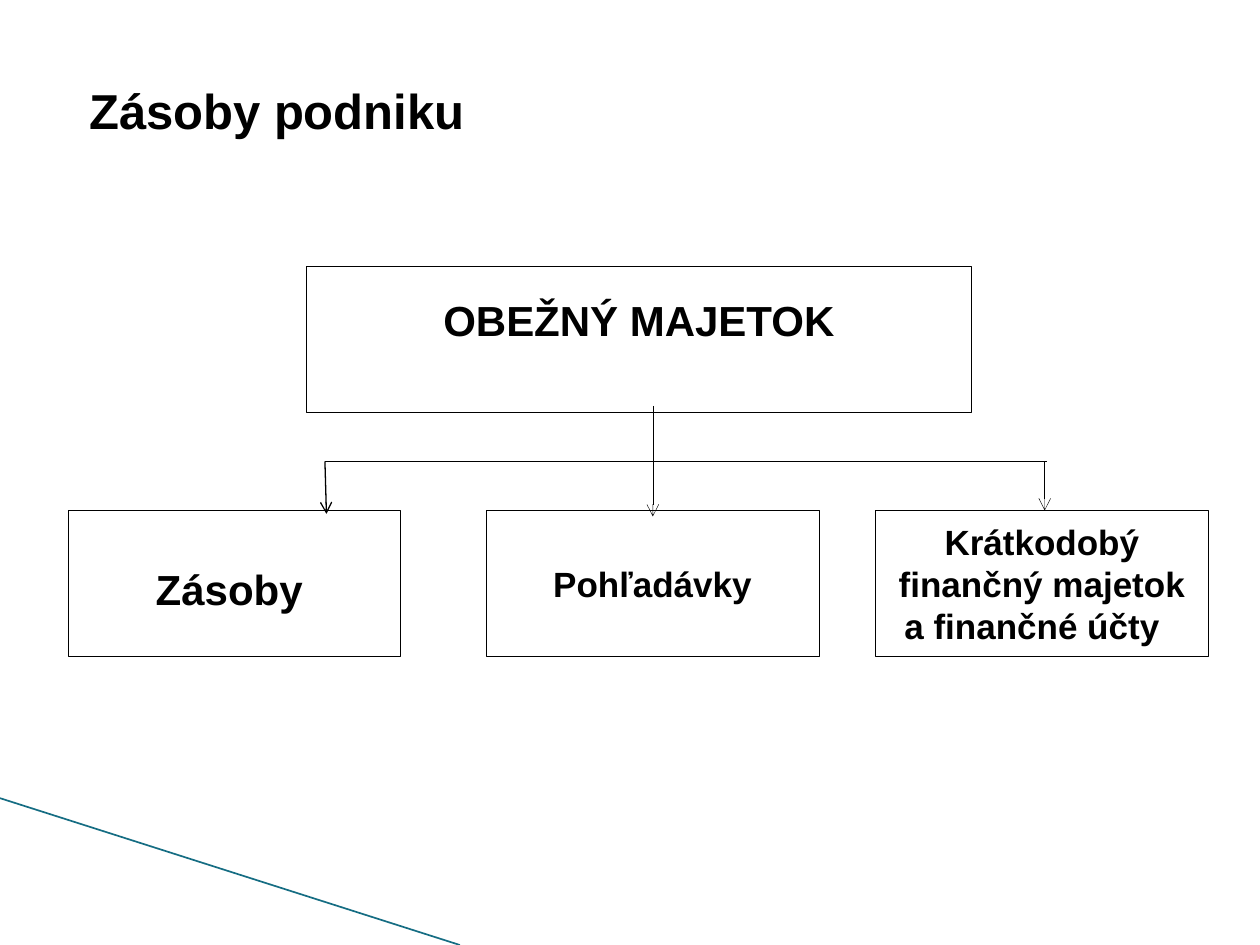
from lxml.etree import SubElement
from pptx import Presentation
from pptx.dml.color import RGBColor
from pptx.enum.shapes import MSO_CONNECTOR, MSO_SHAPE
from pptx.enum.text import MSO_ANCHOR, PP_ALIGN
from pptx.oxml.ns import qn
from pptx.util import Cm, Pt

BLACK = RGBColor(0, 0, 0)
TEAL = RGBColor(0x15, 0x6D, 0x83)
BOX_W, BOX_H = 6.71, 2.95
ROW_Y = 10.29
BAR_Y = 9.3


def style(frame, size, align):
    for para in frame.paragraphs:
        para.alignment = align
        for run in para.runs:
            font = run.font
            font.name, font.size, font.bold = "Arial", Pt(size), True
            font.color.rgb = BLACK


def add_title(slide, text):
    box = slide.shapes.add_textbox(Cm(1.55), Cm(1.5), Cm(22.1), Cm(1.6))
    frame = box.text_frame
    frame.word_wrap = True
    frame.text = text
    style(frame, 28, PP_ALIGN.LEFT)


def add_box(slide, x, y, width, text, size, top, left=0, align=PP_ALIGN.CENTER):
    box = slide.shapes.add_shape(
        MSO_SHAPE.RECTANGLE, Cm(x), Cm(y), Cm(width), Cm(BOX_H))
    box.shadow.inherit = False
    box.fill.background()
    box.line.color.rgb = BLACK
    box.line.width = Pt(0.25)
    frame = box.text_frame
    frame.word_wrap = True
    frame.vertical_anchor = MSO_ANCHOR.TOP
    frame.margin_left, frame.margin_top = Cm(left), Cm(top)
    frame.margin_right = frame.margin_bottom = 0
    frame.text = text
    style(frame, size, align)
    return frame


def add_line(slide, start, end, width=0.25, color=BLACK, arrow=False):
    line = slide.shapes.add_connector(
        MSO_CONNECTOR.STRAIGHT, *map(Cm, start + end))
    line.line.color.rgb = color
    line.line.width = Pt(width)
    if arrow:
        SubElement(line.line._get_or_add_ln(), qn("a:tailEnd"), type="arrow")
    SubElement(line._element.spPr, qn("a:effectLst"))


def main():
    deck = Presentation()
    deck.slide_width, deck.slide_height = Cm(25.4), Cm(19.05)
    slide = deck.slides.add_slide(deck.slide_layouts[6])

    # Corner line and title
    add_line(slide, (0, 16.09), (9.27, 19.05), 0.95, TEAL)
    add_title(slide, "Zásoby podniku")

    # Parent box and its three parts
    add_box(slide, 6.17, 5.36, 2 * BOX_W, "OBEŽNÝ MAJETOK", 24, 0.58)
    add_box(slide, 1.37, ROW_Y, BOX_W, "Zásoby", 24, 1.08, 1.77, PP_ALIGN.LEFT)
    add_box(slide, 9.8, ROW_Y, BOX_W, "Pohľadávky", 20, 1.05)
    funds = add_box(slide, 17.65, ROW_Y, BOX_W,
                    "Krátkodobý finančný majetok\na finančné účty", 20, 0.2)
    # The last line sits slightly left of centre
    funds.paragraphs[-1]._p.get_or_add_pPr().set("marR", str(Cm(0.4)))

    # Branch bar and arrows
    add_line(slide, (6.55, BAR_Y), (21.11, BAR_Y))
    add_line(slide, (6.55, BAR_Y), (6.58, 10.36), 0.75, arrow=True)
    add_line(slide, (13.16, 8.18), (13.16, 10.41), arrow=True)
    add_line(slide, (21.06, BAR_Y), (21.06, ROW_Y), arrow=True)

    deck.save("out.pptx")


if __name__ == "__main__":
    main()
